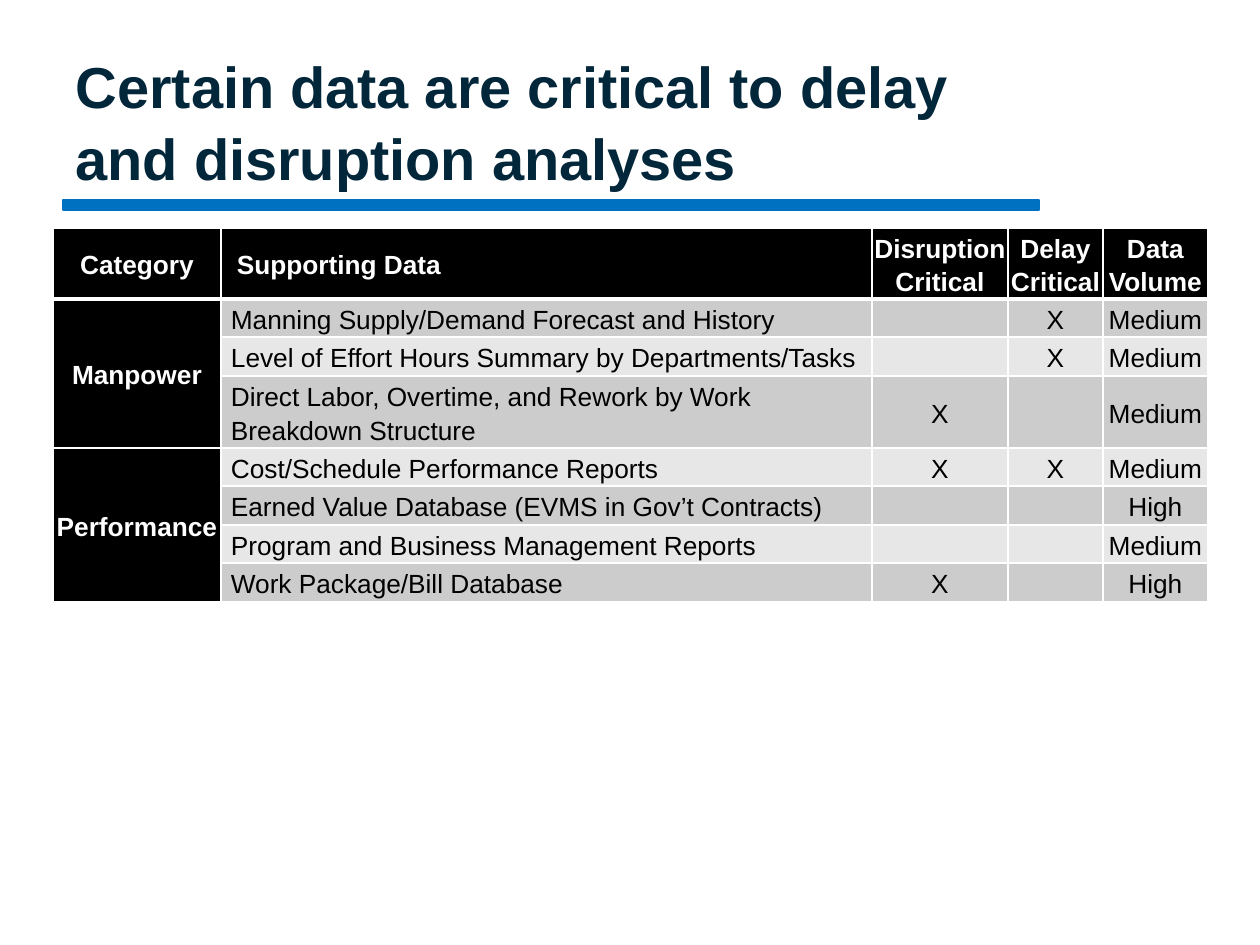
from dataclasses import dataclass

from lxml.etree import SubElement
from pptx import Presentation
from pptx.dml.color import RGBColor
from pptx.enum.shapes import MSO_SHAPE as Shape
from pptx.enum.text import MSO_ANCHOR as Anchor, MSO_AUTO_SIZE as AutoSize, PP_ALIGN as Align
from pptx.oxml import parse_xml
from pptx.oxml.ns import nsdecls, qn
from pptx.util import Emu, Pt

EMU_PER_PX = 7257.14


@dataclass(frozen=True)
class Theme:
    font: str = "Arial"
    title_color: str = "02263A"
    bar: str = "0070C0"
    dark: str = "000000"
    light: str = "FFFFFF"
    bands: tuple[str, str] = ("CCCCCC", "E7E7E7")
    title_size: int = 33
    table_size: int = 15
    table_spacing: float = 1.15


@dataclass(frozen=True)
class DataSource:
    name: str
    disruption: str
    delay: str
    volume: str


@dataclass(frozen=True)
class Category:
    name: str
    sources: tuple[DataSource, ...]


@dataclass(frozen=True)
class CellLook:
    fill: str
    color: str
    bold: bool = False
    indent: int | None = None
    bottom_border: int = 1


THEME = Theme()
HEADINGS = ("Category", "Supporting Data", "Disruption Critical", "Delay Critical", "Data Volume")
HEADING_INDENT = 15
SOURCE_INDENT = 9
COLUMN_WIDTHS = (168, 651, 136, 95, 105)
ROW_HEIGHTS = (71, 38, 39, 72, 38, 39, 38, 39)
CATEGORIES = (
    Category("Manpower", (
        DataSource("Manning Supply/Demand Forecast and History", "", "X", "Medium"),
        DataSource("Level of Effort Hours Summary by Departments/Tasks", "", "X", "Medium"),
        DataSource("Direct Labor, Overtime, and Rework by Work Breakdown Structure", "X", "", "Medium"),
    )),
    Category("Performance", (
        DataSource("Cost/Schedule Performance Reports", "X", "X", "Medium"),
        DataSource("Earned Value Database (EVMS in Gov’t Contracts)", "", "", "High"),
        DataSource("Program and Business Management Reports", "", "", "Medium"),
        DataSource("Work Package/Bill Database", "X", "", "High"),
    )),
)


def px(length: int) -> Emu:
    return Emu(round(length * EMU_PER_PX))


def rgb(color: str) -> RGBColor:
    return RGBColor.from_string(color)


def add_span(para, text: str, size: int, color: str, bold: bool) -> None:
    span = para.add_run()
    span.text = text
    span.font.name = THEME.font
    span.font.size = Pt(size)
    span.font.bold = bold
    span.font.color.rgb = rgb(color)


def draw_title(page, text: str) -> None:
    title = page.shapes.title
    title.left, title.top, title.width, title.height = px(63), px(38), px(987), px(158)
    box = title.text_frame
    box.auto_size = AutoSize.NONE
    box.word_wrap = True
    box.vertical_anchor = Anchor.MIDDLE
    box.margin_top, box.margin_bottom = px(12), px(6)
    para = box.paragraphs[0]
    para.alignment = Align.LEFT
    para.line_spacing = 1.04
    add_span(para, text, THEME.title_size, THEME.title_color, True)


def draw_bar(page) -> None:
    bar = page.shapes.add_shape(Shape.RECTANGLE, px(63), px(200), px(976), px(10))
    bar.shadow.inherit = False
    bar.fill.solid()
    bar.fill.fore_color.rgb = rgb(THEME.bar)
    bar.line.color.rgb = rgb(THEME.bar)
    bar.line.width = Pt(0.75)


def set_borders(cell, bottom: int) -> None:
    properties = cell._tc.get_or_add_tcPr()
    for index, (side, width) in enumerate((("L", 1), ("R", 1), ("T", 1), ("B", bottom))):
        properties.insert(index, parse_xml(
            f'<a:ln{side} {nsdecls("a")} w="{Pt(width)}"><a:solidFill>'
            f'<a:srgbClr val="{THEME.light}"/></a:solidFill></a:ln{side}>'))


def style_cell(cell, text: str, look: CellLook) -> None:
    cell.fill.solid()
    cell.fill.fore_color.rgb = rgb(look.fill)
    set_borders(cell, look.bottom_border)
    cell.vertical_anchor = Anchor.MIDDLE
    cell.margin_left = cell.margin_right = px(1)
    cell.margin_top = cell.margin_bottom = px(2)
    para = cell.text_frame.paragraphs[0]
    para.line_spacing = THEME.table_spacing
    if look.indent is None:
        para.alignment = Align.CENTER
    else:
        para.alignment = Align.LEFT
        para._p.get_or_add_pPr().set("marL", str(px(look.indent)))
    if text:
        add_span(para, text, THEME.table_size, look.color, look.bold)
    else:
        SubElement(para._p, qn("a:endParaRPr")).set("sz", str(THEME.table_size * 100))


def draw_table(page) -> None:
    frame = page.shapes.add_table(len(ROW_HEIGHTS), len(COLUMN_WIDTHS), px(53), px(228),
                                  px(sum(COLUMN_WIDTHS)), px(sum(ROW_HEIGHTS)))
    table = frame.table
    for column, width in zip(table.columns, COLUMN_WIDTHS):
        column.width = px(width)
    for row, height in zip(table.rows, ROW_HEIGHTS):
        row.height = px(height)

    for index, heading in enumerate(HEADINGS):
        indent = HEADING_INDENT if index == 1 else None
        style_cell(table.cell(0, index), heading,
                   CellLook(THEME.dark, THEME.light, True, indent, 3))

    row = 1
    for category in CATEGORIES:
        first = row
        for source in category.sources:
            name = category.name if row == first else ""
            style_cell(table.cell(row, 0), name, CellLook(THEME.dark, THEME.light, True))
            band = THEME.bands[(row - 1) % 2]
            values = (source.name, source.disruption, source.delay, source.volume)
            for index, value in enumerate(values, start=1):
                indent = SOURCE_INDENT if index == 1 else None
                style_cell(table.cell(row, index), value, CellLook(band, THEME.dark, indent=indent))
            row += 1
        table.cell(first, 0).merge(table.cell(row - 1, 0))


def main() -> None:
    deck = Presentation()
    deck.slide_width, deck.slide_height = px(1260), px(945)
    page = deck.slides.add_slide(deck.slide_layouts[5])
    draw_bar(page)
    draw_title(page, "Certain data are critical to delay and disruption analyses")
    draw_table(page)
    deck.save("out.pptx")


if __name__ == "__main__":
    main()
